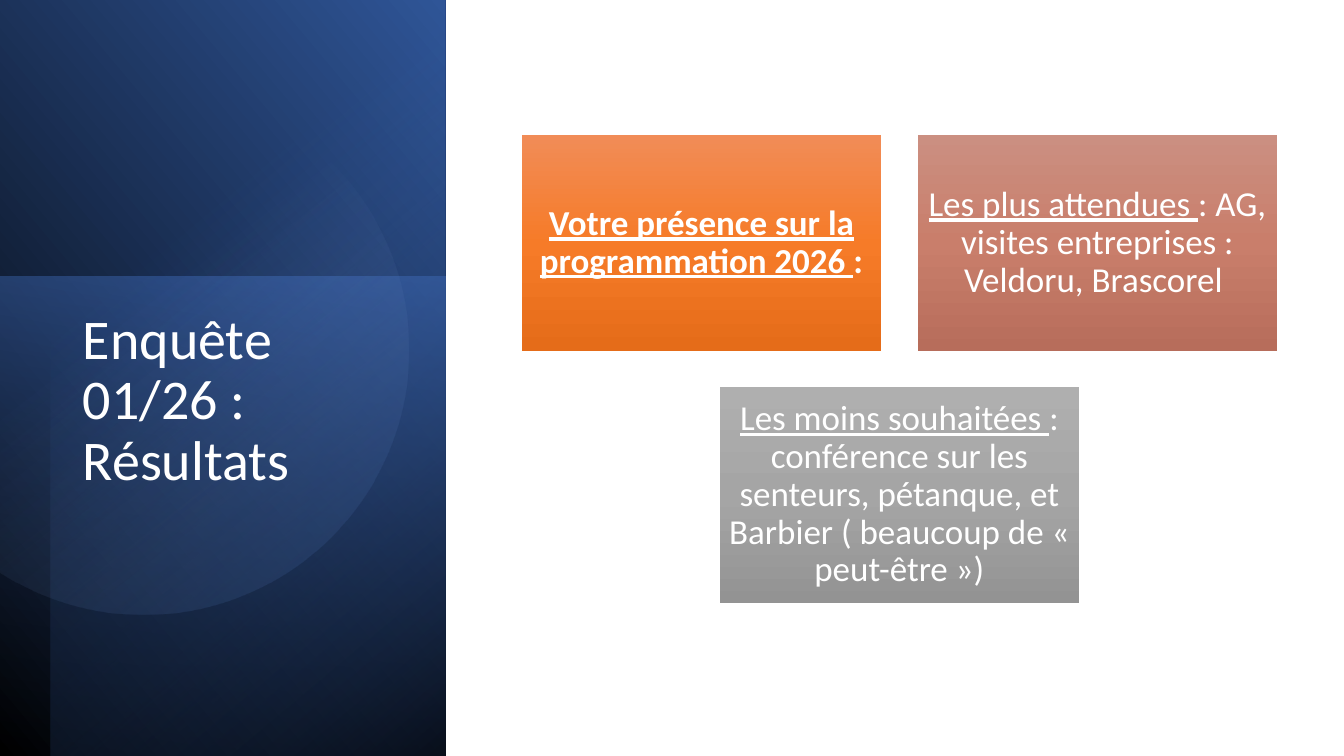
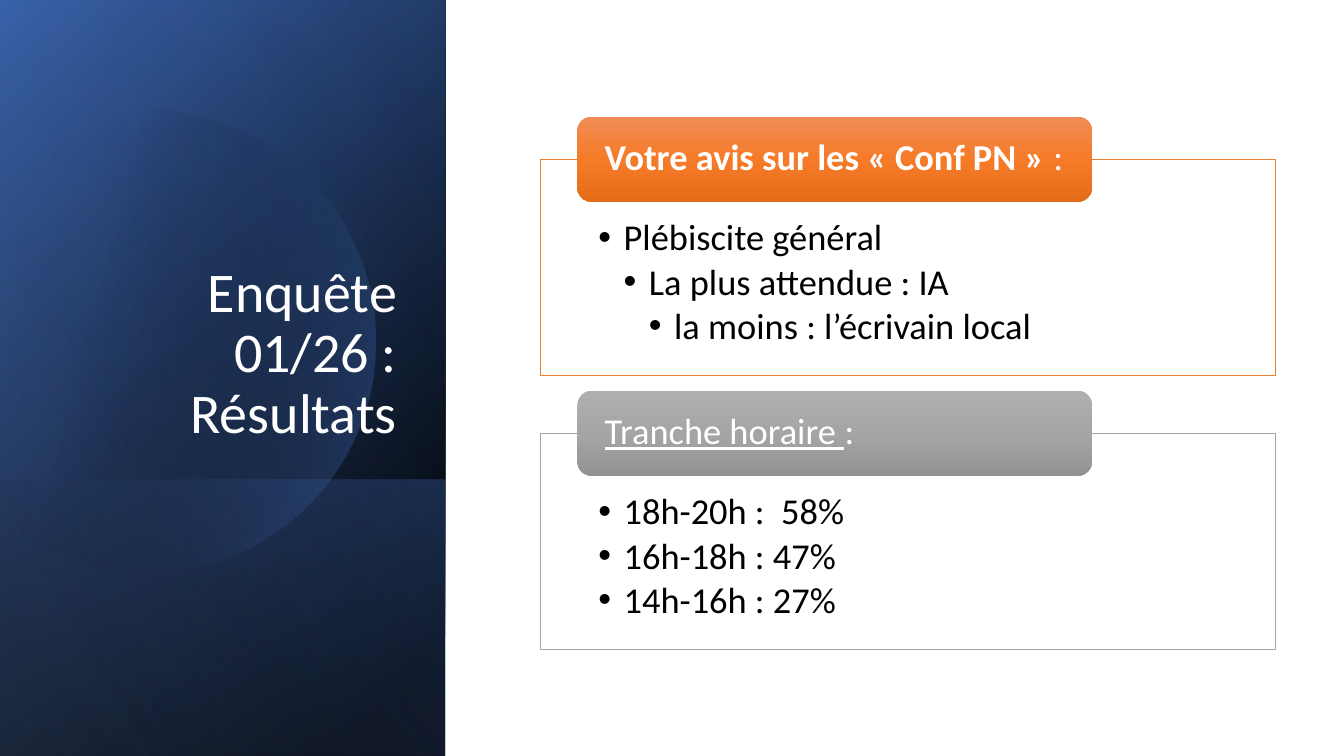
from math import acos, cos, sin

from lxml import etree
from pptx import Presentation
from pptx.dml.color import RGBColor
from pptx.enum.shapes import MSO_SHAPE as SHAPE
from pptx.enum.text import MSO_ANCHOR as ANCHOR, PP_ALIGN as ALIGN
from pptx.oxml.ns import qn
from pptx.util import Pt

PX = 9525  # EMU per px, 96 px to the inch
WIDTH, HEIGHT = 1280, 720
PANEL_W = 424

FONT = "Calibri"
BLACK, WHITE = "000000", "FFFFFF"
BLUE, NAVY, DEEP, PALE = "4472C4", "203864", "2F5597", "8FAADC"
ORANGE, GREY = "ED7D31", "A5A5A5"
ORANGE_FADE = [(0, "F18C57"), (50, "F67B28"), (100, "E56C19")]
ROSE_FADE = [(0, "CB8F81"), (50, "C97E6B"), (100, "B76D5B")]
GREY_FADE = [(0, "AFAFAF"), (50, "A5A5A5"), (100, "939393")]

TITLE = "Enquête 01/26 : Résultats"


def emu(*lengths):
    return [round(n * PX) for n in lengths]


def rgb(color):
    return RGBColor.from_string(color)


def gradient(sp, stops, angle):
    """Fill with (position, colour[, opacity]) stops, all in percent."""
    sp.fill.gradient()
    old = sp.element.spPr.find(qn("a:gradFill"))
    grad = etree.Element(qn("a:gradFill"), rotWithShape="1")
    gs_list = etree.SubElement(grad, qn("a:gsLst"))
    for pos, color, *opacity in stops:
        gs = etree.SubElement(gs_list, qn("a:gs"), pos=str(pos * 1000))
        clr = etree.SubElement(gs, qn("a:srgbClr"), val=color)
        for percent in opacity:
            etree.SubElement(clr, qn("a:alpha"), val=str(percent * 1000))
    etree.SubElement(grad, qn("a:lin"), ang=str(angle * 60000), scaled="0")
    old.getparent().replace(old, grad)


def plain(sp):
    sp.shadow.inherit = False
    sp.line.fill.background()
    return sp


def add_box(s, box, kind=SHAPE.RECTANGLE):
    return plain(s.shapes.add_shape(kind, *emu(*box)))


def set_frame(sp, insets, anchor):
    tf = sp.text_frame
    tf.word_wrap = True
    tf.vertical_anchor = anchor
    for side, inset in zip(("left", "top", "right", "bottom"), insets):
        setattr(tf, f"margin_{side}", round(inset * PX))
    return tf


def add_runs(p, runs, size, color, align=ALIGN.LEFT):
    p.alignment = align
    p.line_spacing = 0.9
    for text, style in runs:
        r = p.add_run()
        r.text = text
        r.font.color.rgb = rgb(color)
        for name, value in {"name": FONT, "size": Pt(size), **style}.items():
            setattr(r.font, name, value)


def add_bullet(p, level):
    pPr = p._p.get_or_add_pPr()
    pPr.set("marL", str(24 * level * PX))
    pPr.set("indent", str(-24 * PX))
    etree.SubElement(pPr, qn("a:buFont"), typeface="Arial")
    etree.SubElement(pPr, qn("a:buChar"), char="•")


# Left panel: quarter-turned gradient layers, a disc cut by the slide edge, title
def add_layer(s, box, stops, angle, rotation=90, flip=True):
    x, y, w, h = box
    sp = add_box(s, (x + (w - h) / 2, y + (h - w) / 2, h, w))
    sp.rotation = rotation
    if flip:
        sp.element.spPr.find(qn("a:xfrm")).set("flipH", "1")
    gradient(sp, stops, angle)


def add_disc(s, cx, cy, radius, stops, angle, steps=120):
    reach = acos(-cx / radius)
    turns = [reach * (2 * i / steps - 1) for i in range(steps + 1)]
    points = [emu(max(0, cx + radius * cos(t)), cy + radius * sin(t)) for t in turns]
    builder = s.shapes.build_freeform(*points[0])
    builder.add_line_segments(points[1:], close=True)
    gradient(plain(builder.convert_to_shape()), stops, angle)


def add_title(s, box, align, anchor):
    tf = set_frame(s.shapes.add_textbox(*emu(*box)), (10, 5, 10, 5), anchor)
    add_runs(tf.paragraphs[0], [(TITLE, {})], 40, WHITE, align)


def rising_panel(s):
    add_layer(s, (0, 0, PANEL_W, HEIGHT), [(0, BLACK), (100, DEEP)], 310)
    add_layer(s, (0, 263, PANEL_W, 457), [(0, BLUE, 50), (100, NAVY, 0)], 190, 270, False)
    add_layer(s, (48, 0, PANEL_W - 48, HEIGHT), [(0, BLACK, 59), (69, BLUE, 0)], 220, 270)
    add_disc(s, 137, 333, 252, [(39, PALE, 0), (100, DEEP, 26)], 52)
    add_title(s, (69, 291, 302, 323), ALIGN.LEFT, ANCHOR.TOP)


def falling_panel(s):
    full = (0, 0, PANEL_W, HEIGHT)
    add_layer(s, full, [(8, BLACK), (100, DEEP)], 50)
    add_layer(s, full, [(0, BLACK, 0), (99, BLUE, 46)], 30)
    add_layer(s, (0, 457, PANEL_W, 263), [(2, BLUE, 29), (100, BLACK, 30)], 130)
    add_disc(s, 137, 325, 221, [(29, BLACK, 0), (100, BLUE, 43)], 14)
    add_layer(s, full, [(0, BLACK, 0), (99, PALE, 11)], 120)
    add_title(s, (61, 177, 327, 252), ALIGN.RIGHT, ANCHOR.BOTTOM)


# Cards, two to a row, the last row centred
def add_cards(s, left, top, cards, w=342, h=205, gap=35, columns=2):
    for i, (stops, runs) in enumerate(cards):
        row, col = divmod(i, columns)
        missing = columns - min(columns, len(cards) - row * columns)
        x = left + (col + missing / 2) * (w + gap)
        sp = add_box(s, (x, top + row * (h + gap), w, h))
        gradient(sp, stops, 90)
        tf = set_frame(sp, (9, 9, 9, 9), ANCHOR.MIDDLE)
        add_runs(tf.paragraphs[0], runs, 25, WHITE, ALIGN.CENTER)


# Framed bullet list with a rounded heading over its top edge
def add_section(s, x, y, w, h, border, stops, heading, bullets):
    frame = add_box(s, (x, y, w, h))
    frame.fill.solid()
    frame.fill.fore_color.rgb = rgb(WHITE)
    frame.line.color.rgb = rgb(border)
    frame.line.width = Pt(0.5)
    tf = set_frame(frame, (55, 57, 55, 19), ANCHOR.TOP)
    for i, (level, text) in enumerate(bullets):
        p = tf.add_paragraph() if i else tf.paragraphs[0]
        add_bullet(p, level)
        p.space_after = Pt(3.5)
        add_runs(p, [(text, {})], 26, BLACK)

    tab = add_box(s, (x + 35, y - 41, 490, 81), SHAPE.ROUNDED_RECTANGLE)
    gradient(tab, stops, 90)
    tf = set_frame(tab, (22, 4, 22, 4), ANCHOR.MIDDLE)
    add_runs(tf.paragraphs[0], heading, 26, WHITE)


def programme_slide(s):
    under = {"underline": True}
    rising_panel(s)
    add_cards(s, 497, 129, [
        (ORANGE_FADE, [
            ("Votre présence sur la programmation 2026 ", {"bold": True, **under}),
            (":", {"bold": True}),
        ]),
        (ROSE_FADE, [
            ("Les plus attendues ", under),
            (": AG, visites entreprises : Veldoru, Brascorel ", {}),
        ]),
        (GREY_FADE, [
            ("Les moins souhaitées ", under),
            (": conférence sur les senteurs, pétanque, et Barbier "
             "( beaucoup de « peut-être »)", {}),
        ]),
    ])


def opinion_slide(s):
    falling_panel(s)
    sections = [
        (ORANGE, ORANGE_FADE,
         [("Votre avis sur les « Conf PN » ", {"bold": True}), (":", {})],
         [(1, "Plébiscite général"), (2, "La plus attendue : IA"),
          (3, "la moins : l’écrivain local")]),
        (GREY, GREY_FADE,
         [("Tranche horaire ", {"underline": True}), (":", {})],
         [(1, "18h-20h :  58%"), (1, "16h-18h : 47%"), (1, "14h-16h : 27%")]),
    ]
    for i, section in enumerate(sections):
        add_section(s, 515, 152 + 261 * i, 700, 206, *section)


def main():
    prs = Presentation()
    prs.slide_width, prs.slide_height = emu(WIDTH, HEIGHT)
    for build in (programme_slide, opinion_slide):
        build(prs.slides.add_slide(prs.slide_layouts[6]))
    prs.save("out.pptx")


if __name__ == "__main__":
    main()
